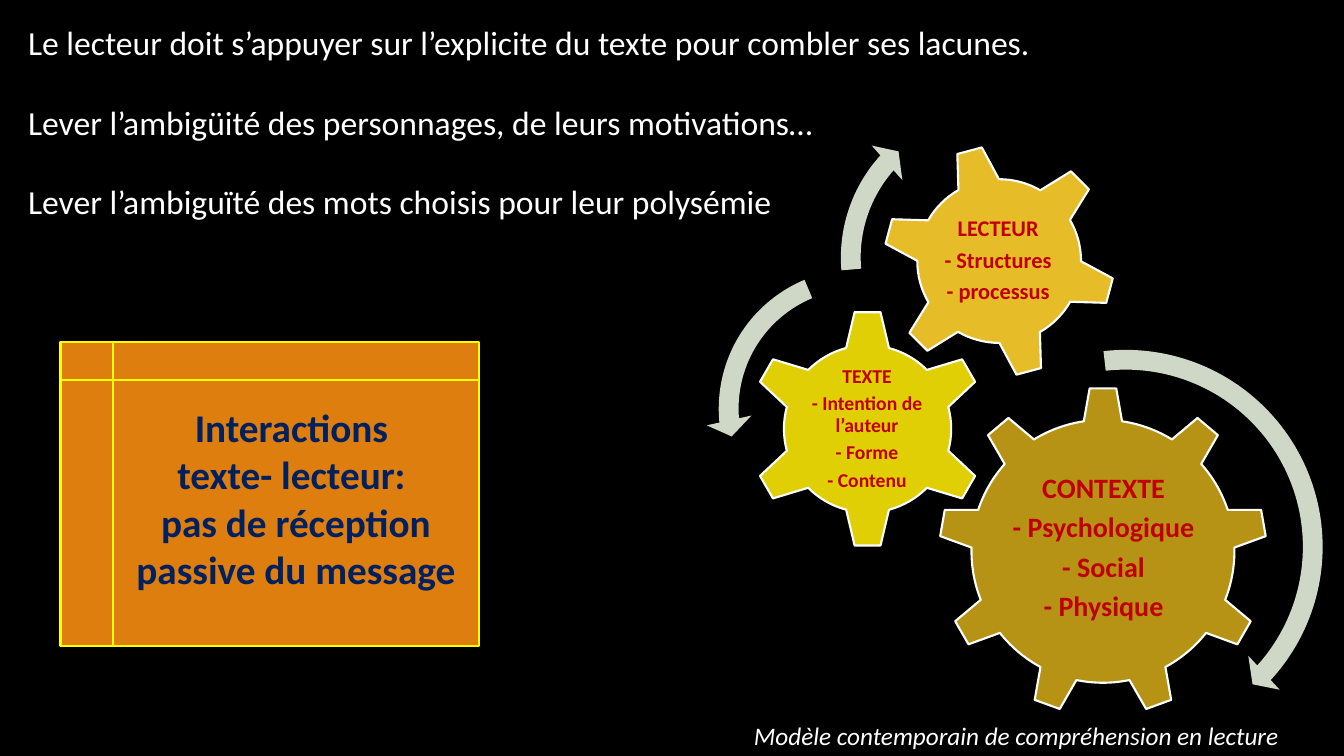
from dataclasses import dataclass

from pptx import Presentation
from pptx import util as u
from pptx.dml import color
from pptx.enum import shapes, text

COLORS = {
    "background": "000000",
    "white": "FFFFFF",
    "context": "B79315",
    "text": "DFCF04",
    "reader": "E7BC29",
    "label": "C00000",
    "arrow": "CFD7C7",
    "panel": "DD7E0E",
    "panel_line": "FFFF00",
    "panel_text": "002060",
}
Kind = shapes.MSO_SHAPE
Box = tuple[float, float, float, float]


@dataclass
class Style:
    size: float
    color: str
    bold: bool = False
    italic: bool = False
    centered: bool = False
    line_spacing: float = 1.0
    before: float = 0
    after: float = 0


@dataclass
class Gear:
    kind: Kind
    box: Box
    fill: str
    label_box: Box
    size: float
    lines: list[str]
    rotation: float = 0


@dataclass
class Arrow:
    kind: Kind
    box: Box
    adjustments: list[float]


INTRODUCTION = [
    "Le lecteur doit s’appuyer sur l’explicite du texte pour combler ses lacunes.",
    "Lever l’ambigüité des personnages, de leurs motivations…",
    "Lever l’ambiguïté des mots choisis pour leur polysémie",
]
CAPTION = "Modèle contemporain de compréhension en lecture"
PANEL = ["Interactions ", "texte- lecteur: ", "pas de réception passive du message"]

GEARS = [
    Gear(Kind.GEAR_9, (9.31, 3.84, 3.26, 3.26), "context", (9.97, 4.6, 1.95, 1.68), 20,
         ["CONTEXTE", "- Psychologique", "- Social", "- Physique"]),
    Gear(Kind.GEAR_6, (7.42, 3.07, 2.37, 2.37), "text", (8.01, 3.67, 1.18, 1.17), 14,
         ["TEXTE", "- Intention de l’auteur", "- Forme", "- Contenu"]),
    Gear(Kind.GEAR_6, (8.75, 1.43, 2.32, 2.32), "reader", (9.25, 1.94, 1.3, 1.3), 16,
         ["LECTEUR", "- Structures", "- processus"], 345),
]
ARROWS = [
    Arrow(Kind.CIRCULAR_ARROW, (9.08, 3.34, 4.17, 4.17),
          [0.047, 2.99, 25.393, 158.123, 0.055]),
    Arrow(Kind.LEFT_CIRCULAR_ARROW, (7, 2.54, 3.03, 3.03),
          [0.065, 4.3, 104.891, 148.378, 0.075]),
    Arrow(Kind.CIRCULAR_ARROW, (8.21, 0.92, 3.27, 3.27),
          [0.06, 3.941, 133.138, 105.082, 0.07]),
]


def rgb(name: str) -> color.RGBColor:
    return color.RGBColor.from_string(COLORS[name])


def inches(box: Box) -> list[u.Length]:
    return [u.Inches(length) for length in box]


def write(frame, lines: list[str], style: Style) -> None:
    frame.word_wrap = True
    for index, line in enumerate(lines):
        paragraph = frame.add_paragraph() if index else frame.paragraphs[0]
        paragraph.alignment = text.PP_ALIGN.CENTER if style.centered else text.PP_ALIGN.LEFT
        paragraph.line_spacing = style.line_spacing
        paragraph.space_before = u.Pt(style.before if index else 0)
        paragraph.space_after = u.Pt(style.after)
        run = paragraph.add_run()
        run.text = line
        run.font.name = "Calibri"
        run.font.size = u.Pt(style.size)
        run.font.bold = style.bold
        run.font.italic = style.italic
        run.font.color.rgb = rgb(style.color)


def add_text(slide, box: Box, lines: list[str], style: Style):
    frame = slide.shapes.add_textbox(*inches(box)).text_frame
    write(frame, lines, style)
    return frame


def add_shape(slide, kind: Kind, box: Box, fill: str, line: str | None = None):
    shape = slide.shapes.add_shape(kind, *inches(box))
    shape.shadow.inherit = False
    shape.fill.solid()
    shape.fill.fore_color.rgb = rgb(fill)
    if line:
        shape.line.color.rgb = rgb(line)
        shape.line.width = u.Pt(1.5)
    else:
        shape.line.fill.background()
    return shape


def add_gear(slide, gear: Gear) -> None:
    shape = add_shape(slide, gear.kind, gear.box, gear.fill, "white")
    shape.rotation = gear.rotation
    style = Style(gear.size, "label", bold=True, centered=True,
                  line_spacing=0.9, after=gear.size * 0.33)
    frame = add_text(slide, gear.label_box, gear.lines, style)
    frame.vertical_anchor = text.MSO_ANCHOR.MIDDLE
    frame.margin_left = frame.margin_right = u.Inches(0.02)
    frame.margin_top = frame.margin_bottom = u.Inches(0.02)


def add_arrow(slide, arrow: Arrow) -> None:
    shape = add_shape(slide, arrow.kind, arrow.box, "arrow")
    for index, value in enumerate(arrow.adjustments):
        shape.adjustments[index] = value


def add_panel(slide) -> None:
    shape = add_shape(slide, Kind.FLOWCHART_INTERNAL_STORAGE, (0.6, 3.39, 4.15, 3.02),
                      "panel", "panel_line")
    frame = shape.text_frame
    frame.vertical_anchor = text.MSO_ANCHOR.MIDDLE
    frame.margin_bottom = u.Inches(0.35)
    write(frame, PANEL, Style(28, "panel_text", bold=True, centered=True))


def main() -> None:
    presentation = Presentation()
    presentation.slide_width = u.Inches(13.33)
    presentation.slide_height = u.Inches(7.5)
    slide = presentation.slides.add_slide(presentation.slide_layouts[6])
    slide.background.fill.solid()
    slide.background.fill.fore_color.rgb = rgb("background")

    add_text(slide, (0.18, 0.17, 11.33, 4.04), INTRODUCTION, Style(24, "white", before=28))
    for gear in GEARS:
        add_gear(slide, gear)
    for arrow in ARROWS:
        add_arrow(slide, arrow)
    add_text(slide, (7.38, 7.1, 5.9, 0.4), [CAPTION], Style(18, "white", italic=True))
    add_panel(slide)
    presentation.save("out.pptx")


if __name__ == "__main__":
    main()
